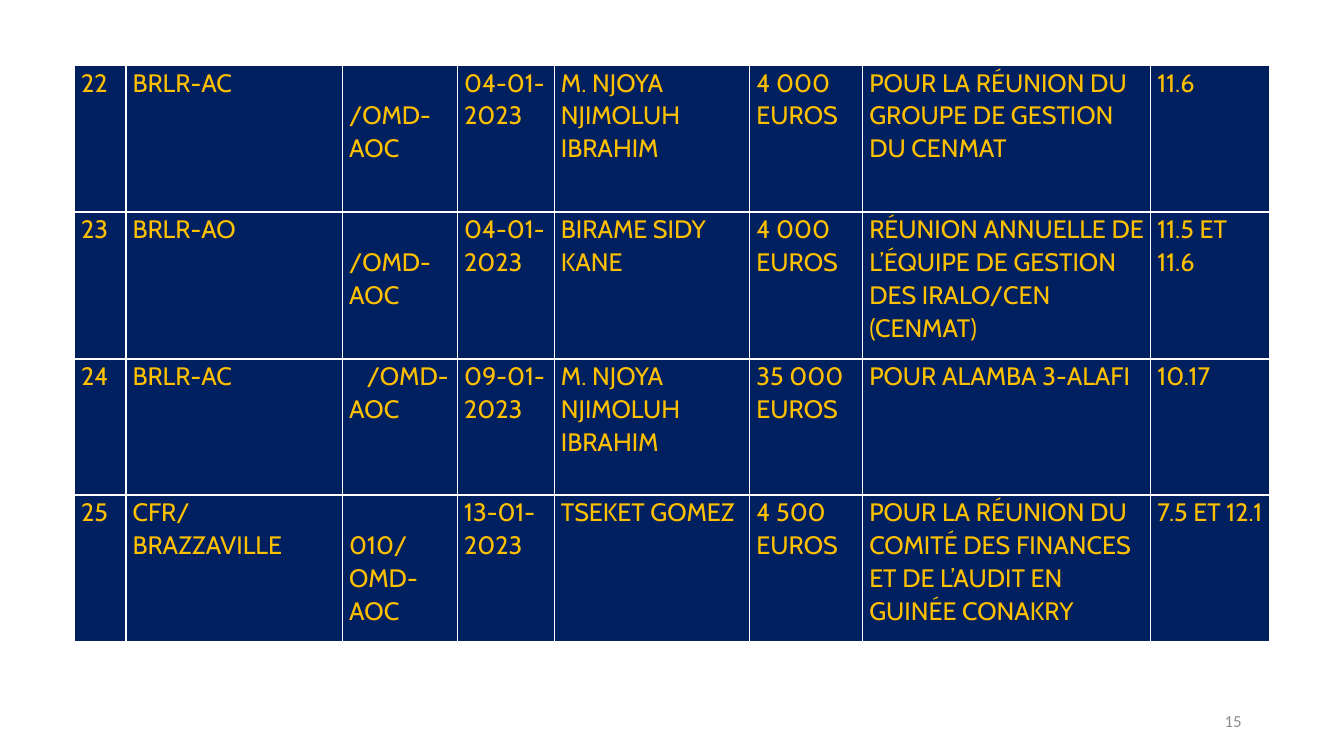
from lxml import etree
from pptx import Presentation
from pptx.dml.color import RGBColor
from pptx.enum import text
from pptx.oxml import ns
from pptx.util import Pt

NAVY = RGBColor(0x00, 0x20, 0x60)
GOLD = RGBColor(0xFF, 0xC0, 0x00)
WHITE = RGBColor(0xFF, 0xFF, 0xFF)
GREY = RGBColor(0x8C, 0x8C, 0x8C)

COLUMN_WIDTHS = [36.7, 154.8, 82.1, 69.1, 139.7, 80.6, 205.8, 85.2]
ROW_HEIGHTS = [104.6, 105, 97.2, 105]
REFERENCE_COLUMN = 2
LINE_HEIGHT = 23.4

PAYMENTS = [
    ["22", "BRLR-AC", "/OMD-AOC", "04-01-2023", "M. NJOYA NJIMOLUH IBRAHIM",
     "4 000 EUROS", "POUR LA RÉUNION DU GROUPE DE GESTION DU CENMAT", "11.6"],
    ["23", "BRLR-AO", "/OMD-AOC", "04-01-2023", "BIRAME SIDY KANE",
     "4 000 EUROS",
     "RÉUNION ANNUELLE DE L’ÉQUIPE DE GESTION DES IRALO/CEN (CENMAT)",
     "11.5 ET 11.6"],
    ["24", "BRLR-AC", "/OMD-AOC", "09-01-2023", "M. NJOYA NJIMOLUH IBRAHIM",
     "35 000 EUROS", "POUR ALAMBA 3-ALAFI", "10.17"],
    ["25", "CFR/BRAZZAVILLE", "010/OMD-AOC", "13-01-2023", "TSEKET GOMEZ",
     "4 500 EUROS",
     "POUR LA RÉUNION DU COMITÉ DES FINANCES ET DE L’AUDIT EN GUINÉE CONAKRY",
     "7.5 ET 12.1"],
]
# References that start on the first line, with the indent of that line
INDENTED_REFERENCES = {"24": 12.6}


def add_span(para, wording, font, size, colour):
    span = para.add_run()
    span.text = wording
    span.font.name = font
    span.font.size = Pt(size)
    span.font.color.rgb = colour


def add_borders(cell):
    properties = cell._tc.get_or_add_tcPr()
    for side in ("a:lnL", "a:lnR", "a:lnT", "a:lnB"):
        line = etree.SubElement(properties, ns.qn(side), w=str(Pt(1)))
        fill = etree.SubElement(line, ns.qn("a:solidFill"))
        etree.SubElement(fill, ns.qn("a:srgbClr"), val=str(WHITE))


def fill_cell(cell, wording):
    add_borders(cell)
    cell.fill.solid()
    cell.fill.fore_color.rgb = NAVY
    cell.margin_left = cell.margin_right = Pt(4.7)
    cell.margin_top = cell.margin_bottom = Pt(0)
    para = cell.text_frame.paragraphs[0]
    para.line_spacing = 1.07
    add_span(para, wording, "Cabin", 18, GOLD)


def place_reference(cell, number):
    """Start the reference one line down, or indent its first line."""
    if number in INDENTED_REFERENCES:
        properties = cell.text_frame.paragraphs[0]._p.get_or_add_pPr()
        properties.set("marL", "0")
        properties.set("indent", str(Pt(INDENTED_REFERENCES[number])))
    else:
        cell.margin_top = Pt(LINE_HEIGHT)


def add_payment_table(page, left, top):
    frame = page.shapes.add_table(
        len(ROW_HEIGHTS), len(COLUMN_WIDTHS), Pt(left), Pt(top),
        Pt(sum(COLUMN_WIDTHS)), Pt(sum(ROW_HEIGHTS)))
    table = frame.table
    table.first_row = table.horz_banding = False
    for column, width in zip(table.columns, COLUMN_WIDTHS):
        column.width = Pt(width)
    for row, height, payment in zip(table.rows, ROW_HEIGHTS, PAYMENTS):
        row.height = Pt(height)
        for cell, wording in zip(row.cells, payment):
            fill_cell(cell, wording)
        place_reference(row.cells[REFERENCE_COLUMN], payment[0])


def add_page_number(page, left, top, width, height):
    box = page.shapes.add_textbox(Pt(left), Pt(top), Pt(width), Pt(height))
    frame = box.text_frame
    frame.word_wrap = True
    frame.vertical_anchor = text.MSO_ANCHOR.MIDDLE
    para = frame.paragraphs[0]
    para.alignment = text.PP_ALIGN.RIGHT
    add_span(para, "15", "Calibri", 12, GREY)


def main():
    deck = Presentation()
    deck.slide_width, deck.slide_height = Pt(960), Pt(540)
    page = deck.slides.add_slide(deck.slide_layouts[6])
    # Payments 22 to 25
    add_payment_table(page, 53.3, 46.8)
    # Page number at the bottom right
    add_page_number(page, 678, 500.5, 216, 28.75)
    deck.save("out.pptx")


if __name__ == "__main__":
    main()
